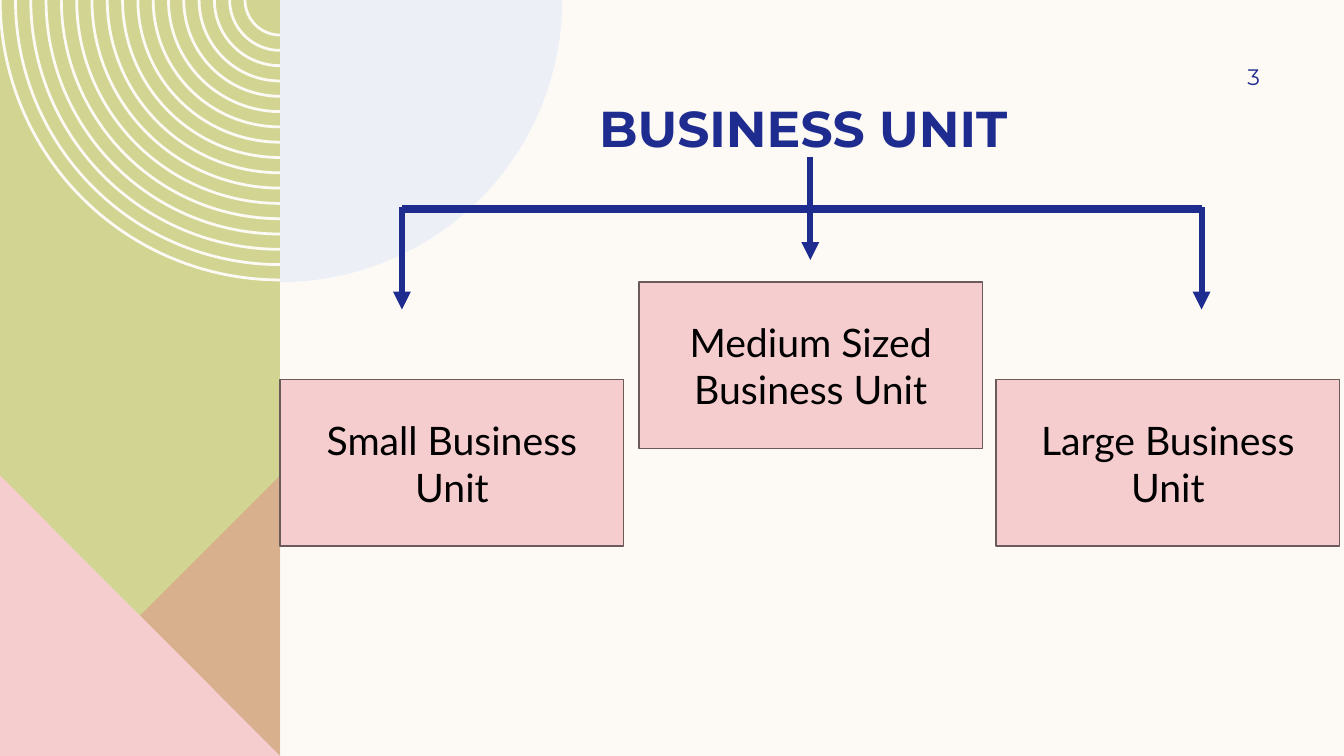
from lxml import etree
from pptx import Presentation
from pptx.dml.color import RGBColor
from pptx.enum.shapes import MSO_CONNECTOR, MSO_SHAPE
from pptx.enum.text import MSO_ANCHOR, PP_ALIGN
from pptx.oxml.ns import qn
from pptx.util import Cm, Pt

CENTER, RIGHT = PP_ALIGN.CENTER, PP_ALIGN.RIGHT
MIDDLE, BOTTOM = MSO_ANCHOR.MIDDLE, MSO_ANCHOR.BOTTOM
RECT, STRAIGHT = MSO_SHAPE.RECTANGLE, MSO_CONNECTOR.STRAIGHT

THEME = {
    "cream": RGBColor.from_string("FDFAF6"),
    "green": RGBColor.from_string("D2D592"),
    "rose": RGBColor.from_string("DE8C8C"),
    "pink": RGBColor.from_string("F5CDCE"),
    "sky": RGBColor.from_string("DDE7F6"),
    "navy": RGBColor.from_string("1F2C8F"),
    "outline": RGBColor.from_string("6B5A5A"),
    "black": RGBColor.from_string("000000"),
    "head_font": "Montserrat",
    "body_font": "Lato",
    "title": Pt(36),
    "number": Pt(16),
    "unit": Pt(28),
}

prs = Presentation()
prs.slide_width, prs.slide_height = Cm(33.87), Cm(19.05)
s = prs.slides.add_slide(prs.slide_layouts[6])
s.background.fill.solid()
s.background.fill.fore_color.rgb = THEME["cream"]


def add_outline(contours, color, alpha=None):
    fb = s.shapes.build_freeform(Cm(contours[0][0][0]), Cm(contours[0][0][1]))
    bends = []
    for i, points in enumerate(contours):
        corners = [(Cm(x), Cm(y)) for x, y, *bend in points]
        bends += [bend for x, y, *bend in points[1:]]
        if i:
            fb.move_to(*corners[0])
        fb.add_line_segments(corners[1:], close=True)
    sp = fb.convert_to_shape()
    sp.shadow.inherit = False
    sp.line.fill.background()
    sp.fill.solid()
    sp.fill.fore_color.rgb = THEME[color]
    for side, bend in zip(list(sp._element.iter(qn("a:lnTo"))), bends):
        if bend:
            radius, start, sweep = bend
            arc = etree.Element(qn("a:arcTo"))
            arc.set("wR", str(int(Cm(radius))))
            arc.set("hR", str(int(Cm(radius))))
            arc.set("stAng", str(start * 60000))
            arc.set("swAng", str(sweep * 60000))
            side.getparent().replace(side, arc)
    if alpha:
        clr = sp._element.spPr.find(qn("a:solidFill"))[0]
        etree.SubElement(clr, qn("a:alpha")).set("val", str(alpha * 1000))


def write(sp, text, font, size, color, align, anchor):
    tf = sp.text_frame
    tf.word_wrap = True
    tf.vertical_anchor = anchor
    p = tf.paragraphs[0]
    p.alignment = align
    r = p.add_run()
    r.text = text
    r.font.name, r.font.size = THEME[font], THEME[size]
    r.font.color.rgb = THEME[color]
    return r


edge, bottom, fold = 7.06, 19.05, 11.98

add_outline([[(0, 0), (edge, 0), (edge, bottom), (0, bottom)]], "green")

ring_count, ring_width = 17, 0.07
outer, inner = 7.09, 0.92
gap = (outer - inner) / (ring_count - 1)
rings = []
for i in range(ring_count):
    radius = outer - i * gap
    hole = radius - ring_width
    rings.append([
        (edge - radius, 0),
        (edge - hole, 0),
        (edge, hole, hole, 180, -90),
        (edge, radius),
        (edge - radius, 0, radius, 90, 90),
    ])
add_outline(rings, "cream")

add_outline([[(edge, fold), (edge, bottom), (0, bottom)]], "rose", 50)
add_outline([[(0, fold), (edge, bottom), (0, bottom)]], "pink")
disc = 7.11
add_outline([[(edge, 0), (edge + disc, 0), (edge, disc, disc, 0, 90)]], "sky", 50)

title = s.shapes.add_textbox(Cm(9.18), Cm(1.19), Cm(22.12), Cm(2.77))
title.text_frame.margin_top = title.text_frame.margin_bottom = 0
r = write(title, "BUSINESS UNIT", "head_font", "title", "navy", CENTER, BOTTOM)
r.font.bold = True

number = s.shapes.add_textbox(Cm(28.78), Cm(1.27), Cm(2.97), Cm(1.32))
number.text_frame.margin_right = 0
write(number, "3", "head_font", "number", "navy", RIGHT, MIDDLE)

units = [
    ("Small Business Unit", edge, 9.57),
    ("Medium Sized Business Unit", 16.1, 7.11),
    ("Large Business Unit", 25.1, 9.57),
]
for text, x, y in units:
    sp = s.shapes.add_shape(RECT, Cm(x), Cm(y), Cm(8.66), Cm(4.19))
    sp.shadow.inherit = False
    sp.fill.solid()
    sp.fill.fore_color.rgb = THEME["pink"]
    sp.line.color.rgb = THEME["outline"]
    sp.line.width = Pt(1)
    write(sp, text, "body_font", "unit", "black", CENTER, MIDDLE)

left, middle, right = 10.13, 20.42, 30.28
branches = [
    (middle, 3.96, middle, 6.55, 4.25, True),
    (left, 5.26, right, 5.26, 5.75, False),
    (left, 5.21, left, 7.8, 4.25, True),
    (right, 5.21, right, 7.8, 4.25, True),
]
for x1, y1, x2, y2, width, arrow in branches:
    cn = s.shapes.add_connector(STRAIGHT, Cm(x1), Cm(y1), Cm(x2), Cm(y2))
    cn.line.color.rgb = THEME["navy"]
    cn.line.width = Pt(width)
    if arrow:
        ln = cn._element.spPr.find(qn("a:ln"))
        etree.SubElement(ln, qn("a:tailEnd")).set("type", "triangle")
    etree.SubElement(cn._element.spPr, qn("a:effectLst"))

prs.save("out.pptx")
